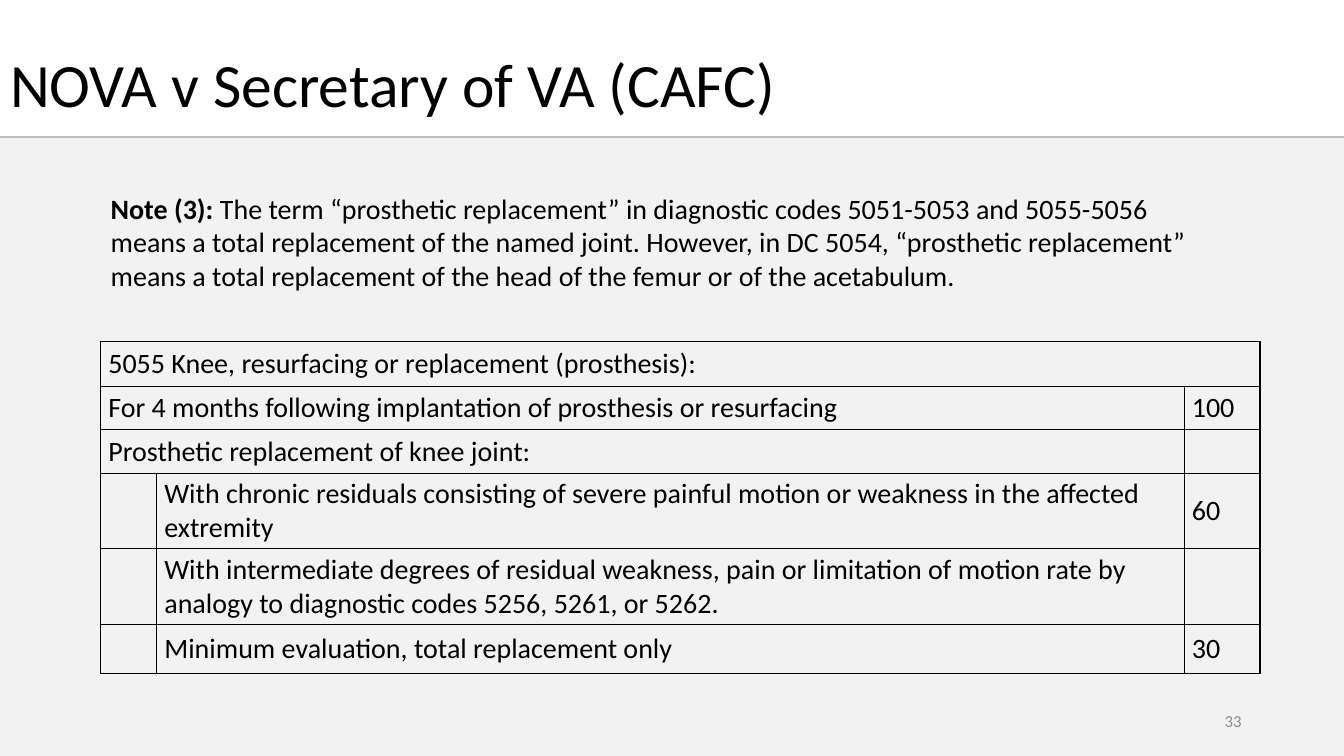
"""Build the slide on prosthetic knee replacement ratings."""
from lxml.etree import SubElement
from pptx import Presentation
from pptx.dml.color import RGBColor
from pptx.enum.shapes import MSO_CONNECTOR, MSO_SHAPE
from pptx.enum.text import MSO_ANCHOR, PP_ALIGN
from pptx.oxml import parse_xml
from pptx.oxml.ns import nsdecls, qn
from pptx.util import Pt

BLACK = RGBColor(0x00, 0x00, 0x00)
PANEL_GRAY = RGBColor(0xF2, 0xF2, 0xF2)
RULE_GRAY = RGBColor(0xBF, 0xBF, 0xBF)
NUMBER_GRAY = RGBColor(0x8C, 0x8C, 0x8C)

TITLE = "NOVA v Secretary of VA (CAFC)"
NOTE_LABEL = "Note (3):"
NOTE_TEXT = (
    " The term “prosthetic replacement” in diagnostic codes 5051-5053 and 5055-5056 "
    "means a total replacement of the named joint. However, in DC 5054, “prosthetic "
    "replacement” means a total replacement of the head of the femur or of the acetabulum."
)
PAGE_NUMBER = "33"
RATINGS = [
    ("5055 Knee, resurfacing or replacement (prosthesis):", "", ""),
    ("For 4 months following implantation of prosthesis or resurfacing", "", "100"),
    ("Prosthetic replacement of knee joint:", "", ""),
    ("", "With chronic residuals consisting of severe painful motion or weakness "
         "in the affected extremity", "60"),
    ("", "With intermediate degrees of residual weakness, pain or limitation of motion "
         "rate by analogy to diagnostic codes 5256, 5261, or 5262.", ""),
    ("", "Minimum evaluation, total replacement only", "30"),
]
LAST_MERGED_COLUMN = {0: 2, 1: 1, 2: 1}
COLUMN_WIDTHS = [40, 734, 54]
ROW_HEIGHTS = [32, 31, 31, 54, 54, 35]

SLIDE_WIDTH, SLIDE_HEIGHT = 960, 540
RULE_TOP = 98
LEFT_MARGIN = 72
TITLE_BOX = (0, 28, 569.5, 69)
NOTE_BOX = (LEFT_MARGIN, 133, 807, 80)
NUMBER_BOX = (678, 500.5, 216, 28.75)
TABLE_TOP = 244

TITLE_FORMAT = {"name": "Calibri", "size": Pt(44), "bold": False}
BODY_FORMAT = {"name": "Calibri", "size": Pt(20), "bold": False}
LABEL_FORMAT = {**BODY_FORMAT, "bold": True}
NUMBER_FORMAT = {"name": "Calibri", "size": Pt(12), "bold": False}
CELL_FORMAT = {
    "margin_left": Pt(5.4), "margin_right": Pt(5.4),
    "margin_top": Pt(2.7), "margin_bottom": Pt(2.7),
    "vertical_anchor": MSO_ANCHOR.MIDDLE,
}


def apply_format(target, values):
    for name, value in values.items():
        setattr(target, name, value)


def add_run(paragraph, text, font_format, color=BLACK):
    run = paragraph.add_run()
    run.text = text
    apply_format(run.font, font_format)
    run.font.color.rgb = color


def add_text_box(slide, box, anchor):
    frame = slide.shapes.add_textbox(*map(Pt, box)).text_frame
    frame.word_wrap = True
    frame.vertical_anchor = anchor
    return frame.paragraphs[0]


def add_borders(cell):
    properties = cell._tc.get_or_add_tcPr()
    for index, side in enumerate(("lnL", "lnR", "lnT", "lnB")):
        properties.insert(index, parse_xml(
            f'<a:{side} {nsdecls("a")} w="{Pt(1)}"><a:solidFill>'
            f'<a:srgbClr val="{BLACK}"/></a:solidFill></a:{side}>'))


def add_backdrop(slide):
    panel = slide.shapes.add_shape(
        MSO_SHAPE.RECTANGLE, 0, Pt(RULE_TOP), Pt(SLIDE_WIDTH), Pt(SLIDE_HEIGHT - RULE_TOP))
    panel.shadow.inherit = False
    panel.fill.solid()
    panel.fill.fore_color.rgb = PANEL_GRAY
    panel.line.fill.background()
    rule = slide.shapes.add_connector(
        MSO_CONNECTOR.STRAIGHT, 0, Pt(RULE_TOP), Pt(SLIDE_WIDTH), Pt(RULE_TOP))
    rule.line.color.rgb = RULE_GRAY
    rule.line.width = Pt(1.5)
    SubElement(rule._element.spPr, qn("a:effectLst"))


def add_title(slide):
    title = slide.shapes.title
    apply_format(title, dict(zip(("left", "top", "width", "height"), map(Pt, TITLE_BOX))))
    title.text_frame.vertical_anchor = MSO_ANCHOR.MIDDLE
    paragraph = title.text_frame.paragraphs[0]
    apply_format(paragraph, {"alignment": PP_ALIGN.LEFT, "line_spacing": 0.9})
    add_run(paragraph, TITLE, TITLE_FORMAT)


def add_ratings_table(slide):
    table = slide.shapes.add_table(
        len(ROW_HEIGHTS), len(COLUMN_WIDTHS), Pt(LEFT_MARGIN), Pt(TABLE_TOP),
        Pt(sum(COLUMN_WIDTHS)), Pt(sum(ROW_HEIGHTS))).table
    apply_format(table, {"first_row": False, "horz_banding": False})
    for column, width in zip(table.columns, COLUMN_WIDTHS):
        column.width = Pt(width)
    for row, height in zip(table.rows, ROW_HEIGHTS):
        row.height = Pt(height)
    for row_index, texts in enumerate(RATINGS):
        for column_index, text in enumerate(texts):
            cell = table.cell(row_index, column_index)
            apply_format(cell, CELL_FORMAT)
            cell.fill.background()
            add_borders(cell)
            if text:
                add_run(cell.text_frame.paragraphs[0], text, BODY_FORMAT)
    for row_index, last_column in LAST_MERGED_COLUMN.items():
        table.cell(row_index, 0).merge(table.cell(row_index, last_column))


def main():
    presentation = Presentation()
    presentation.slide_width = Pt(SLIDE_WIDTH)
    presentation.slide_height = Pt(SLIDE_HEIGHT)
    slide = presentation.slides.add_slide(presentation.slide_layouts.get_by_name("Title Only"))
    add_backdrop(slide)
    add_title(slide)
    note = add_text_box(slide, NOTE_BOX, MSO_ANCHOR.TOP)
    add_run(note, NOTE_LABEL, LABEL_FORMAT)
    add_run(note, NOTE_TEXT, BODY_FORMAT)
    add_ratings_table(slide)
    number = add_text_box(slide, NUMBER_BOX, MSO_ANCHOR.MIDDLE)
    number.alignment = PP_ALIGN.RIGHT
    add_run(number, PAGE_NUMBER, NUMBER_FORMAT, NUMBER_GRAY)
    presentation.save("out.pptx")


if __name__ == "__main__":
    main()
